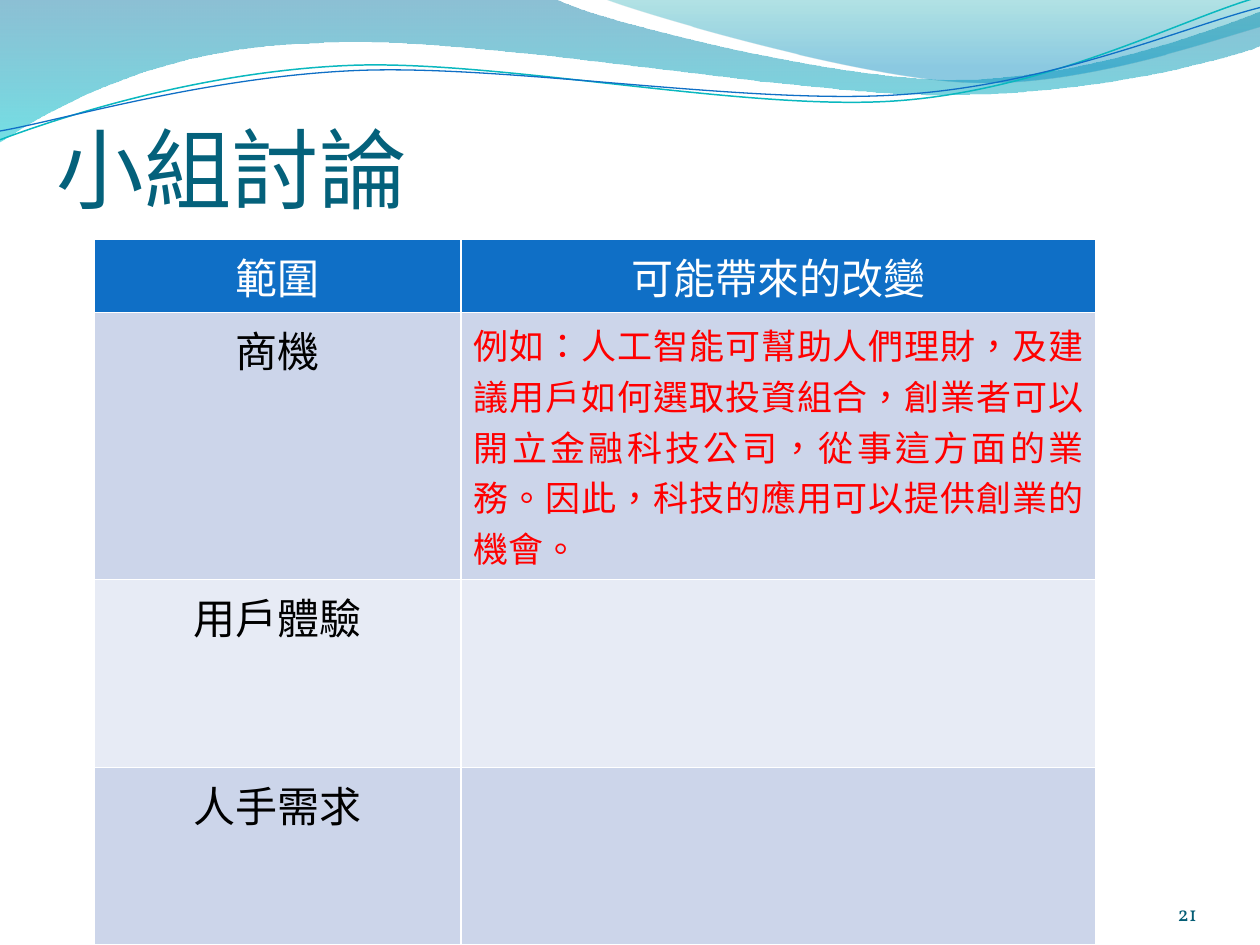
import pptx
import pptx.util
import pptx.dml.color
import pptx.enum.text
import pptx.oxml.ns
from lxml import etree

Inches, Pt = pptx.util.Inches, pptx.util.Pt
Align, Anchor = pptx.enum.text.PP_ALIGN, pptx.enum.text.MSO_ANCHOR
qn = pptx.oxml.ns.qn
SANS, SERIF = "Noto Sans CJK SC", "Vollkorn"
HUES = {
    "title": "04617B", "page": "045D75", "head": "0F6FC6", "odd": "CCD5EA",
    "even": "E7EBF5", "white": "FFFFFF", "black": "000000", "red": "FF0000",
    "deep": "0074A1", "cyan": "00C6CF", "teal": "00A1A9", "sky": "008BBF",
    "aqua": "0AB8BF",
}
WAVE = [
    (-0.01, 0), (4.4, -0.01),
    (4.76, 0.17, 6.64, 0.63, 7.58, 0.63), (8.53, 0.63, 9.58, 0.26, 10, 0.09),
    (10.01, 0.36),
    (9.83, 0.44, 8.7, 0.76, 7.46, 0.75), (6.22, 0.75, 3.82, 0.28, 2.57, 0.34),
    (1.29, 0.36, 0.46, 0.83, -0.01, 1.13),
]
CREST = [
    (4.79, -0.01),
    (5.09, 0.11, 6.82, 0.62, 7.69, 0.65), (8.56, 0.69, 9.61, 0.32, 10, 0.21),
    (10, 0),
]
UPPER = [
    (0, 1.11), (0.48, 0.93, 1.58, 0.57, 2.77, 0.52),
    (3.95, 0.47, 5.93, 0.89, 7.13, 0.8), (8.33, 0.71, 9.38, 0.15, 9.98, -0.02),
]
LOWER = [
    (0, 1.04), (0.47, 0.96, 1.64, 0.61, 2.83, 0.56),
    (4.03, 0.51, 5.97, 0.84, 7.17, 0.75), (8.36, 0.67, 9.41, 0.21, 10, 0.06),
]
ROWS = [
    ("範圍", "可能帶來的改變"),
    ("商機", "例如：人工智能可幫助人們理財，及建議用戶如何選取投資組合，"
     "創業者可以開立金融科技公司，從事這方面的業務。因此，科技的應用可以提供創業的機會。"),
    ("用戶體驗", ""),
    ("人手需求", ""),
]


def color(key):
    """Return the named colour."""
    return pptx.dml.color.RGBColor.from_string(HUES[key])


def add_path(slide, steps, close):
    """Add a freeform whose six-number steps are cubic curves."""
    unit = 1000
    ends = [(x * unit, y * unit) for *_, x, y in steps]
    maker = slide.shapes.build_freeform(*ends[0], scale=Inches(1) / unit)
    maker.add_line_segments(ends[1:], close=close)
    shape = maker.convert_to_shape()
    shape.shadow.inherit = False
    left, top = (min(axis) for axis in zip(*ends))
    lines = list(shape.element.spPr.iter(qn("a:lnTo")))
    for line, step in zip(lines, steps[1:]):
        if len(step) == 2:
            continue
        curve = etree.Element(qn("a:cubicBezTo"))
        for x, y in zip(step[::2], step[1::2]):
            etree.SubElement(curve, qn("a:pt"), x=str(round(x * unit - left)),
                             y=str(round(y * unit - top)))
        line.getparent().replace(line, curve)
    return shape


def add_band(slide, steps, stops):
    """Add a wave filled with a see-through vertical gradient."""
    shape = add_path(slide, steps, True)
    shape.line.fill.background()
    shape.fill.gradient()
    shape.fill.gradient_angle = 270
    for stop, (place, key, _) in zip(shape.fill.gradient_stops, stops):
        stop.position = place
        stop.color.rgb = color(key)
    tints = shape.element.spPr.iter(qn("a:srgbClr"))
    for tint, (_, _, alpha) in zip(tints, stops):
        etree.SubElement(tint, qn("a:alpha"), val=str(alpha * 1000))


def add_curve(slide, steps, key, width):
    """Add an open curved line."""
    shape = add_path(slide, steps, False)
    shape.fill.background()
    shape.line.color.rgb = color(key)
    shape.line.width = Pt(width)


def write(frame, text, size, face, key, align):
    """Write one styled paragraph into a text frame."""
    para = frame.paragraphs[0]
    para.text = text
    para.alignment = align
    font = para.font
    font.size, font.name, font.bold = Pt(size), face, False
    font.color.rgb = color(key)
    props = para._p.pPr
    props.set("hangingPunct", "0")
    etree.SubElement(props.find(qn("a:defRPr")), qn("a:ea"), typeface=SANS)
    para.runs[0]._r.get_or_add_rPr().set("lang", "zh-TW")


def set_frame(frame, top=0):
    """Anchor a frame at the bottom and clear its margins."""
    frame.word_wrap = True
    frame.vertical_anchor = Anchor.BOTTOM
    frame.margin_left = frame.margin_right = frame.margin_bottom = 0
    frame.margin_top = Inches(top)


def add_title(slide):
    """Fill the title placeholder."""
    title = slide.shapes.title
    title.left, title.top = Inches(0.45), Inches(0.5)
    title.width, title.height = Inches(9.08), Inches(1.25)
    set_frame(title.text_frame, 0.05)
    write(title.text_frame, "小組討論", 50, SANS, "title", Align.LEFT)


def add_page(slide):
    """Add the page number."""
    box = slide.shapes.add_textbox(
        Inches(8.67), Inches(6.95), Inches(0.83), Inches(0.4))
    set_frame(box.text_frame)
    write(box.text_frame, "21", 12, SERIF, "page", Align.RIGHT)


def add_grid(slide):
    """Add the discussion table."""
    sizes = (0.58, 2.12, 1.49, 1.41)
    table = slide.shapes.add_table(
        len(ROWS), 2, Inches(0.75), Inches(1.9),
        Inches(7.95), Inches(sum(sizes))).table
    for col, width in zip(table.columns, (2.91, 5.04)):
        col.width = Inches(width)
    for r, texts in enumerate(ROWS):
        table.rows[r].height = Inches(sizes[r])
        for c, text in enumerate(texts):
            cell = table.cell(r, c)
            cell.fill.solid()
            shade = "head" if r == 0 else "odd" if r % 2 else "even"
            cell.fill.fore_color.rgb = color(shade)
            if r and c:
                look = (20, SERIF, "red", Align.JUSTIFY)
            else:
                face = SERIF if r == c == 0 else SANS
                look = (24, face, "black" if r else "white", Align.CENTER)
            if text:
                write(cell.text_frame, text, *look)


def main():
    """Build and save the slide."""
    deck = pptx.Presentation()
    deck.slide_width, deck.slide_height = Inches(10), Inches(7.5)
    slide = deck.slides.add_slide(deck.slide_layouts[5])
    add_band(slide, WAVE, [(0, "deep", 45), (1, "cyan", 55)])
    add_band(slide, CREST, [(0, "teal", 30), (0.8, "sky", 45)])
    add_curve(slide, UPPER, "aqua", 0.85)
    add_curve(slide, LOWER, "head", 0.75)
    add_title(slide)
    add_page(slide)
    add_grid(slide)
    deck.save("out.pptx")


if __name__ == "__main__":
    main()
